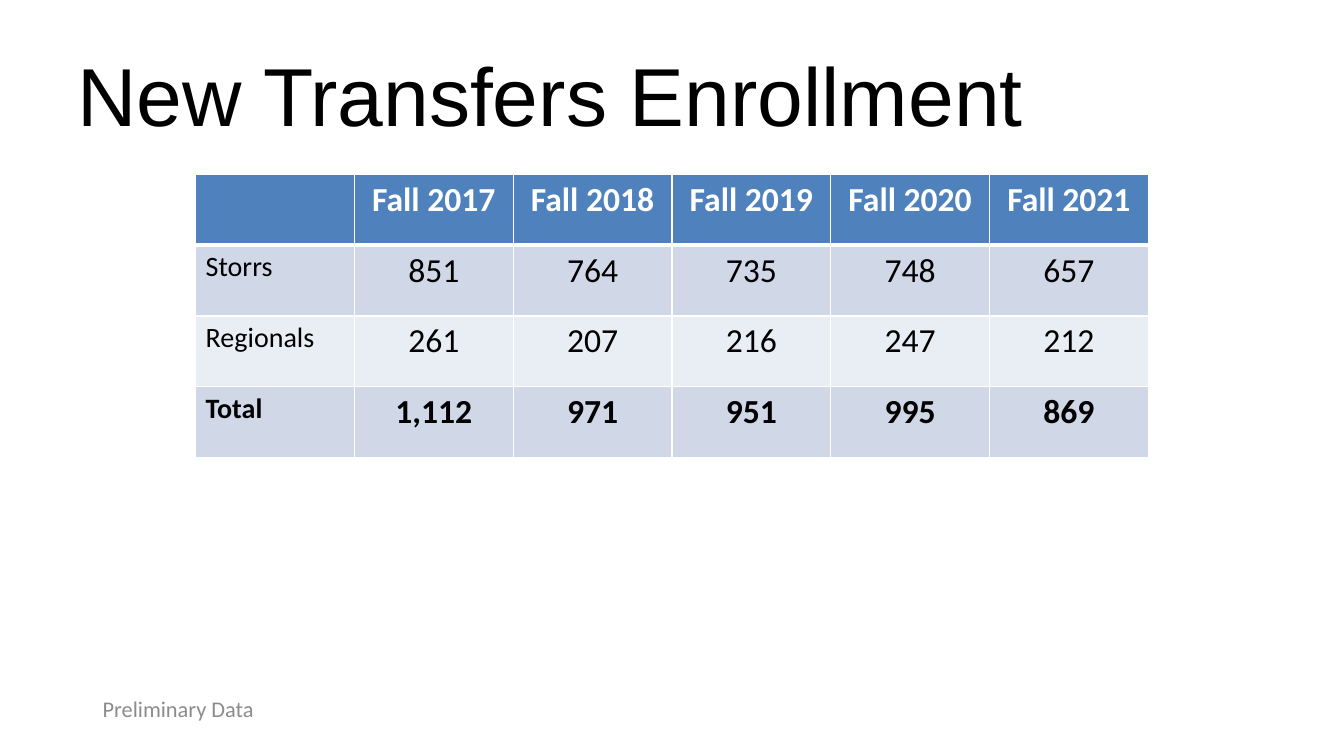
from lxml.etree import SubElement
from pptx import Presentation
from pptx.dml.color import RGBColor
from pptx.enum.text import MSO_ANCHOR as Anchor, PP_ALIGN as Align
from pptx.oxml import parse_xml
from pptx.oxml.ns import nsdecls, qn
from pptx.util import Pt

EMU_PER_PX = 9144
WHITE = RGBColor(0xFF, 0xFF, 0xFF)
BLACK = RGBColor(0, 0, 0)
GRAY = RGBColor(0x8C, 0x8C, 0x8C)
HEADER_BLUE = RGBColor(0x4F, 0x81, 0xBD)
BAND_DARK = RGBColor(0xD0, 0xD8, 0xE8)
BAND_LIGHT = RGBColor(0xE9, 0xED, 0xF4)

ENROLLMENT = [
    ["", "Fall 2017", "Fall 2018", "Fall 2019", "Fall 2020", "Fall 2021"],
    ["Storrs", "851", "764", "735", "748", "657"],
    ["Regionals", "261", "207", "216", "247", "212"],
    ["Total", "1,112", "971", "951", "995", "869"],
]


def px(*lengths):
    return [length * EMU_PER_PX for length in lengths]


def write(frame, text, size=24, font="Calibri", color=BLACK, bold=False, align=Align.LEFT):
    paragraph = frame.paragraphs[0]
    paragraph.alignment = align
    paragraph.font.size = Pt(size)
    if text:
        run = paragraph.add_run()
        run.text = text
        run.font.size = Pt(size)
        run.font.name = font
        run.font.bold = bold
        run.font.color.rgb = color


def set_borders(cell, **widths):
    properties = cell._tc.get_or_add_tcPr()
    for position, side in enumerate("LRTB"):
        border = parse_xml(f'<a:ln{side} {nsdecls("a")} w="{Pt(widths.get(side, 1))}"/>')
        fill = SubElement(border, qn("a:solidFill"))
        SubElement(fill, qn("a:srgbClr"), val=str(WHITE))
        properties.insert(position, border)


class TransferSlide:
    def __init__(self, deck):
        self.slide = deck.slides.add_slide(deck.slide_layouts[6])

    def text(self, box, text, **style):
        frame = self.slide.shapes.add_textbox(*px(*box)).text_frame
        frame.word_wrap = True
        frame.vertical_anchor = Anchor.MIDDLE
        write(frame, text, **style)

    def table(self, box, rows):
        grid = self.slide.shapes.add_table(len(rows), len(rows[0]), *px(*box)).table
        for row, values in enumerate(rows):
            header = row == 0
            band = HEADER_BLUE if header else BAND_DARK if row % 2 else BAND_LIGHT
            for column, value in enumerate(values):
                cell = grid.cell(row, column)
                cell.fill.solid()
                cell.fill.fore_color.rgb = band
                set_borders(cell, T=3 if row == 1 else 1, B=3 if header else 1)
                write(
                    cell.text_frame,
                    value,
                    size=24 if column or header else 20,
                    color=WHITE if header else BLACK,
                    bold=header or values[0] == "Total",
                    align=Align.CENTER if column else Align.LEFT,
                )


def main():
    deck = Presentation()
    deck.slide_width, deck.slide_height = px(1333, 750)
    page = TransferSlide(deck)
    page.text((67, 30, 1200, 125), "New Transfers Enrollment", size=58.7, font="Arial")
    page.table((194, 173, 945, 281), ENROLLMENT)
    page.text((92, 683, 300, 40), "Preliminary Data", size=16, color=GRAY)
    deck.save("out.pptx")


if __name__ == "__main__":
    main()
